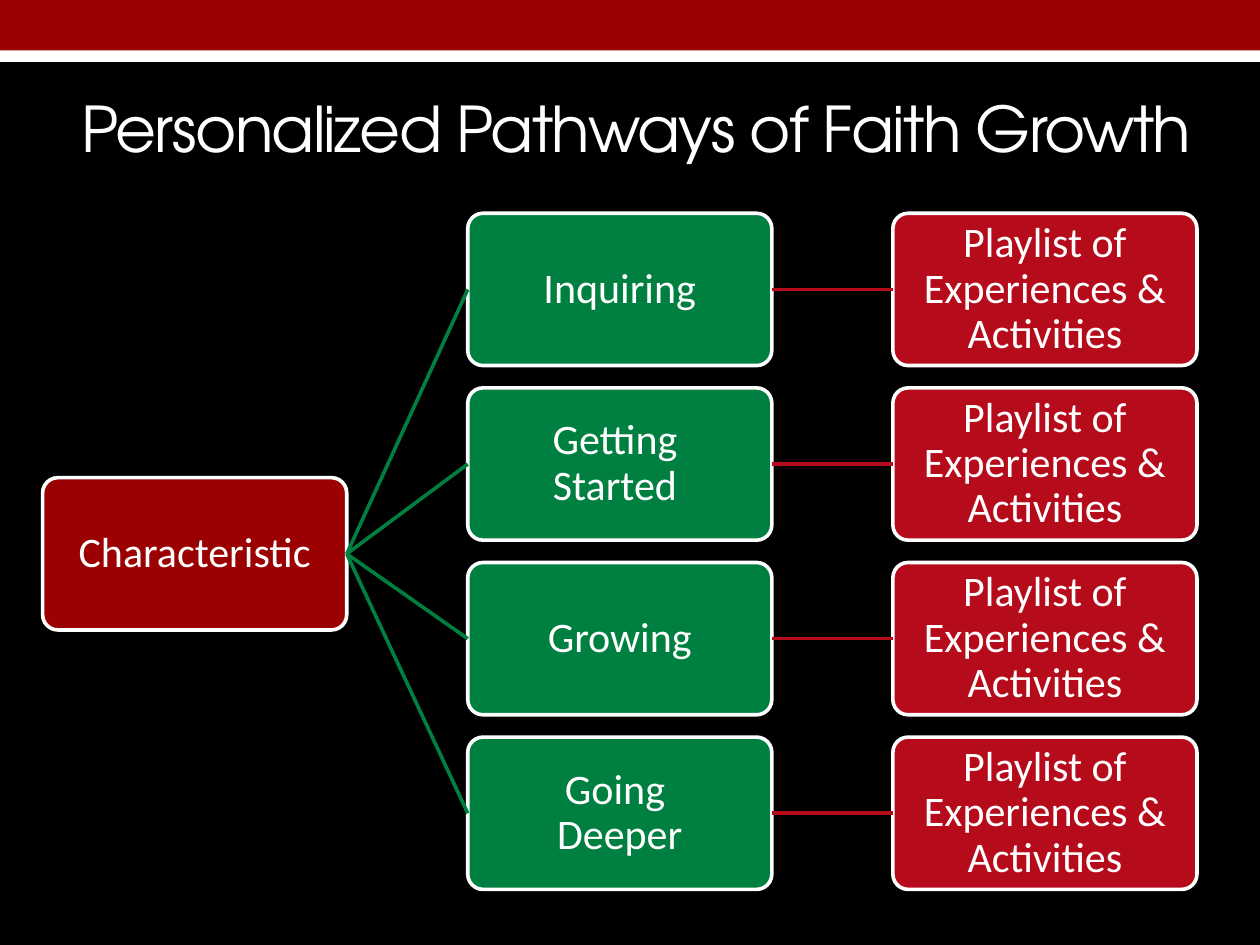
from lxml import etree
from pptx import Presentation
from pptx import util as u
from pptx.dml.color import RGBColor
from pptx.enum import shapes, text
from pptx.oxml.ns import qn

WHITE, BLACK, DARK_RED, RED, GREEN = "FFFFFF", "000000", "9B0101", "B50B1B", "008040"
BOX_WIDTH, BOX_HEIGHT = 6.13, 3.07
LEFT, COLUMN_STEP = 0.86, 8.57
TOP, ROW_STEP = 4.3, 3.52
ROOT_TOP = 9.63
LINE_WIDTH = u.Pt(2.08)
STAGES = ["Inquiring", "Getting \vStarted ", "Growing", "Going \vDeeper"]
PLAYLIST = "Playlist of Experiences & Activities"


def color(value):
    return RGBColor.from_string(value)


def add_filled(slide, kind, left, top, width, height, fill):
    """Add a shape with a plain fill, no outline and no shadow."""
    shape = slide.shapes.add_shape(kind, u.Cm(left), u.Cm(top), u.Cm(width), u.Cm(height))
    shape.shadow.inherit = False
    shape.fill.solid()
    shape.fill.fore_color.rgb = color(fill)
    shape.line.fill.background()
    return shape


def write_text(shape, words, font_name, size):
    """Write one white paragraph in the middle of the shape."""
    frame = shape.text_frame
    frame.word_wrap = True
    frame.vertical_anchor = text.MSO_ANCHOR.MIDDLE
    paragraph = frame.paragraphs[0]
    paragraph.text = words
    paragraph.alignment = text.PP_ALIGN.CENTER
    paragraph.font.name = font_name
    paragraph.font.size = u.Pt(size)
    paragraph.font.color.rgb = color(WHITE)
    return paragraph


def add_title(slide, words):
    box = slide.shapes.add_textbox(u.Cm(0.86), u.Cm(1.04), u.Cm(23.93), u.Cm(3.05))
    paragraph = write_text(box, words, "TeX Gyre Adventor", 36)
    paragraph.runs[0].font._element.set("spc", "-100")


def add_box(slide, column, top, words, fill):
    box = add_filled(slide, shapes.MSO_SHAPE.ROUNDED_RECTANGLE,
                     LEFT + column * COLUMN_STEP, top, BOX_WIDTH, BOX_HEIGHT, fill)
    box.adjustments[0] = 0.1
    box.line.color.rgb = color(WHITE)
    box.line.width = LINE_WIDTH
    frame = box.text_frame
    frame.margin_left = frame.margin_right = u.Cm(0.1)
    frame.margin_top = frame.margin_bottom = u.Cm(0.1)
    write_text(box, words, "Calibri", 24).line_spacing = 0.9
    return box


def join(slide, start, end, line_color):
    """Draw a line from the right side of start to the left side of end."""
    line = slide.shapes.add_connector(shapes.MSO_CONNECTOR.STRAIGHT, 0, 0, 0, 0)
    line.begin_connect(start, 3)
    line.end_connect(end, 1)
    line.line.color.rgb = color(line_color)
    line.line.width = LINE_WIDTH
    etree.SubElement(line._element.spPr, qn("a:effectLst"))


def main():
    presentation = Presentation()
    presentation.slide_width, presentation.slide_height = u.Cm(25.4), u.Cm(19.05)
    slide = presentation.slides.add_slide(presentation.slide_layouts[6])
    slide.background.fill.solid()
    slide.background.fill.fore_color.rgb = color(BLACK)

    add_filled(slide, shapes.MSO_SHAPE.RECTANGLE, 0, 0.61, 25.4, 0.64, WHITE)
    add_filled(slide, shapes.MSO_SHAPE.RECTANGLE, 0, 0, 25.4, 1.02, DARK_RED)
    add_title(slide, "Personalized Pathways of Faith Growth")

    root = add_box(slide, 0, ROOT_TOP, "Characteristic", DARK_RED)
    for row, name in enumerate(STAGES):
        top = TOP + row * ROW_STEP
        stage = add_box(slide, 1, top, name, GREEN)
        playlist = add_box(slide, 2, top, PLAYLIST, RED)
        join(slide, root, stage, GREEN)
        join(slide, stage, playlist, RED)

    presentation.save("out.pptx")


if __name__ == "__main__":
    main()
